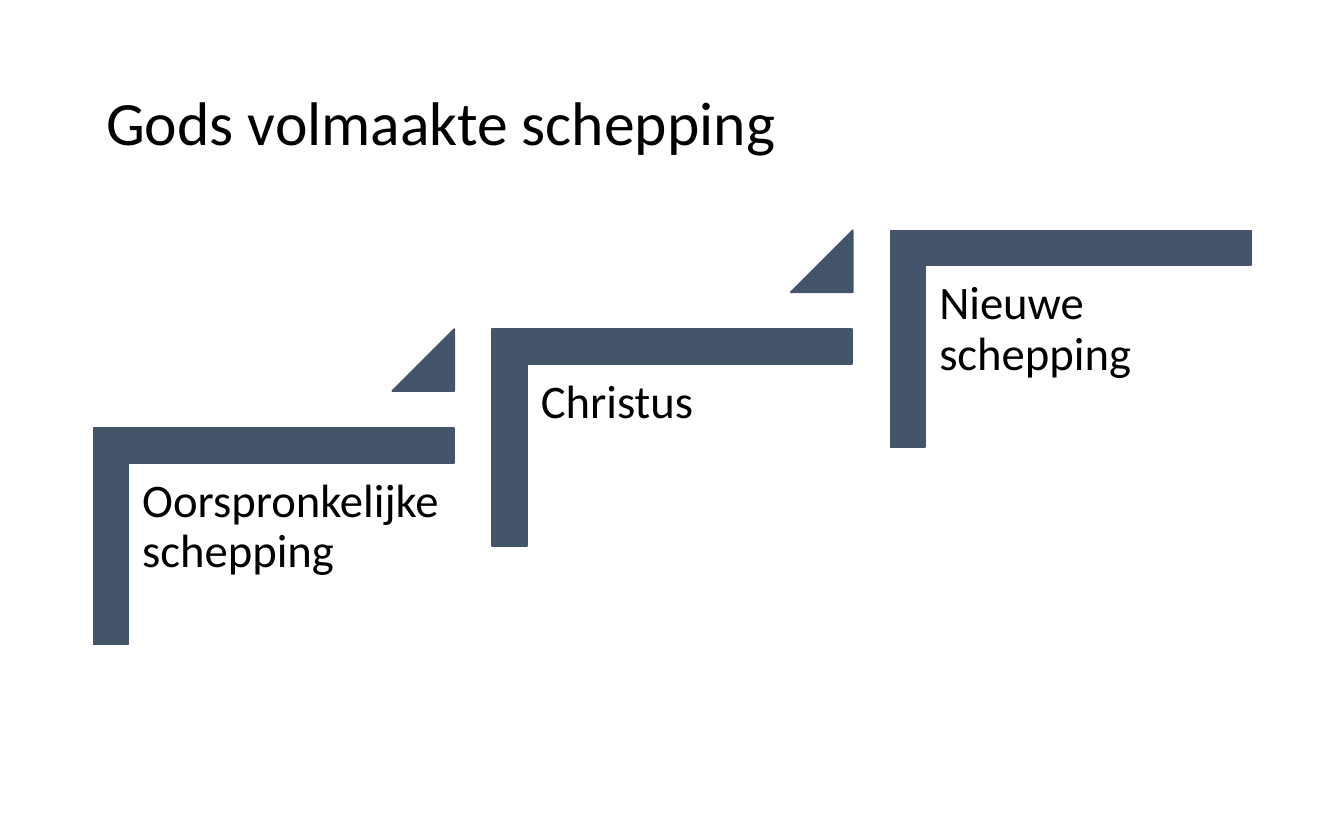
from dataclasses import dataclass

from pptx import Presentation
from pptx.dml.color import RGBColor
from pptx.enum.shapes import MSO_SHAPE
from pptx.enum.text import MSO_ANCHOR, PP_ALIGN
from pptx.shapes.group import GroupShape
from pptx.text.text import TextFrame
from pptx.util import Inches, Pt

CORNER = MSO_SHAPE.CORNER
TRIANGLE = MSO_SHAPE.ISOSCELES_TRIANGLE
TOP, MIDDLE = MSO_ANCHOR.TOP, MSO_ANCHOR.MIDDLE
LEFT = PP_ALIGN.LEFT

SLATE = RGBColor(0x44, 0x54, 0x6A)
BLACK = RGBColor(0x00, 0x00, 0x00)

LABELS = ["Oorspronkelijke schepping", "Christus", "Nieuwe schepping"]
FIRST_X, FIRST_Y = 1.23, 2.65
STEP_X = 5.93 / 2
STEP_Y = -1.47 / 2


@dataclass
class Step:
    label: str
    x: float
    y: float
    rises: bool


def write_text(frame: TextFrame, text: str, size: float, anchor: MSO_ANCHOR, inset: float) -> None:
    frame.text = text
    paragraph = frame.paragraphs[0]
    margin = Inches(inset)
    frame_format = {
        "word_wrap": True,
        "vertical_anchor": anchor,
        "margin_left": margin,
        "margin_right": margin,
        "margin_top": margin,
        "margin_bottom": margin,
    }
    paragraph_format = {"alignment": LEFT, "line_spacing": 0.9}
    font_format = {"name": "Calibri", "size": Pt(size)}
    for target, values in (
        (frame, frame_format),
        (paragraph, paragraph_format),
        (paragraph.runs[0].font, font_format),
    ):
        for name, value in values.items():
            setattr(target, name, value)
    paragraph.runs[0].font.color.rgb = BLACK


def draw_solid(stairs: GroupShape, kind: MSO_SHAPE, box: tuple[float, float, float, float],
               adjustments: list[float], rotation: float = 0) -> None:
    solid = stairs.shapes.add_shape(kind, *map(Inches, box))
    solid.rotation = rotation
    solid.shadow.inherit = False
    solid.fill.solid()
    solid.fill.fore_color.rgb = SLATE
    solid.line.color.rgb = SLATE
    solid.line.width = Pt(1)
    for index, value in enumerate(adjustments):
        solid.adjustments[index] = value


def draw_step(stairs: GroupShape, step: Step) -> None:
    draw_solid(stairs, CORNER, (step.x, step.y, 1.61, 2.68), [0.16, 0.16], 90)
    label = stairs.shapes.add_textbox(
        Inches(step.x - 0.27), Inches(step.y + 0.8), Inches(2.42), Inches(2.12)
    )
    write_text(label.text_frame, step.label, 25, TOP, 0.1)
    if step.rises:
        draw_solid(stairs, TRIANGLE, (step.x + 1.69, step.y - 0.2, 0.46, 0.46), [1])


def main() -> None:
    presentation = Presentation()
    presentation.slide_width = Inches(10)
    presentation.slide_height = Inches(6.25)
    slide = presentation.slides.add_slide(presentation.slide_layouts[5])

    title = slide.shapes.title
    title_place = {"left": 0.69, "top": 0.33, "width": 8.62, "height": 1.21}
    for name, value in title_place.items():
        setattr(title, name, Inches(value))
    write_text(title.text_frame, "Gods volmaakte schepping", 33, MIDDLE, 0.1)

    stairs = slide.shapes.add_group_shape()
    for index, label in enumerate(LABELS):
        rises = index < len(LABELS) - 1
        draw_step(stairs, Step(label, FIRST_X + index * STEP_X, FIRST_Y + index * STEP_Y, rises))

    presentation.save("out.pptx")


if __name__ == "__main__":
    main()
